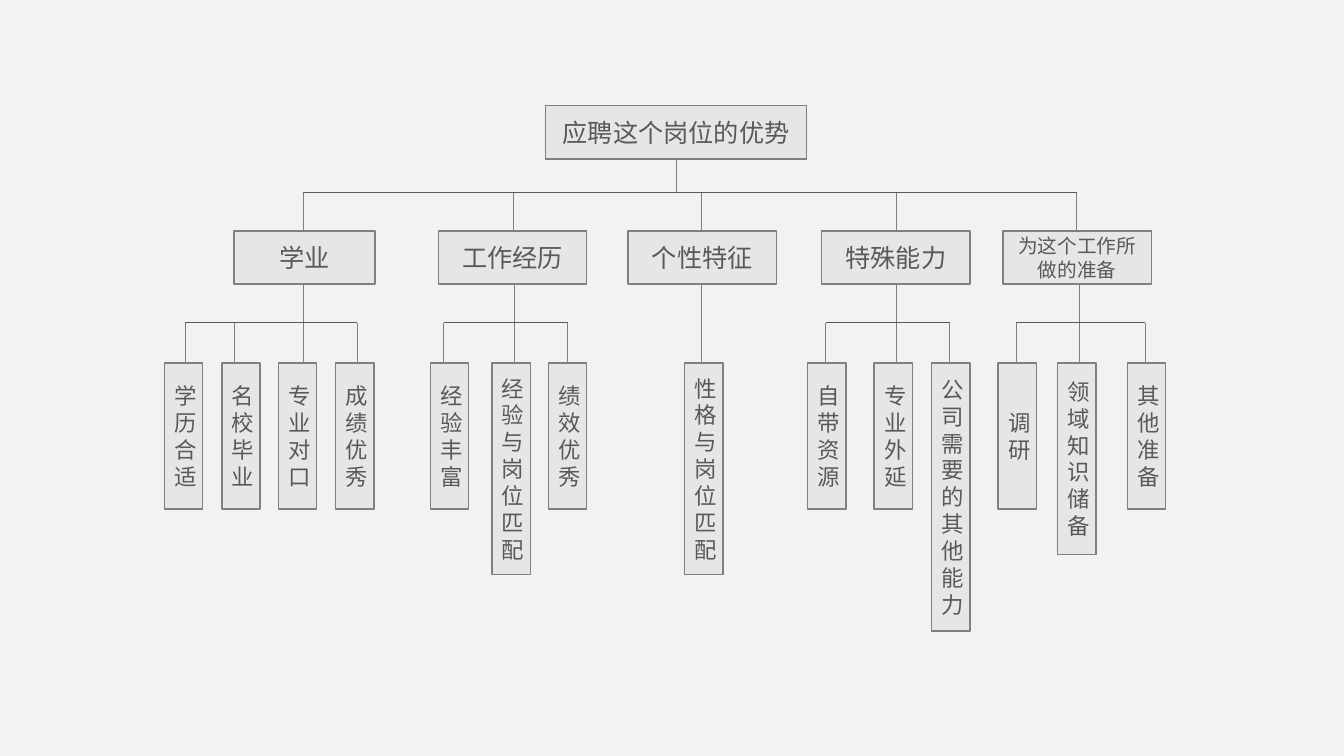
from pptx import Presentation
from pptx.dml.color import RGBColor
from pptx.enum.shapes import MSO_CONNECTOR, MSO_SHAPE
from pptx.enum.text import MSO_ANCHOR, PP_ALIGN
from pptx.oxml.ns import qn
from pptx.util import Inches, Pt
from lxml.etree import SubElement

COLORS = {"back": "F2F2F2", "box": "E7E6E6", "edge": "808080", "ink": "595959"}
FONT = "Noto Sans CJK SC"

ROOT_X, ROOT_END = 6.71, 1.58
BUS_Y, HEAD_Y, HEAD_H = 1.91, 2.29, 0.53
RAIL_Y, LEAF_Y, LEAF_W = 3.2, 3.6, 0.38

# heading, left, width, text size, drop x, stem x, leaves (text, left, height, tick x)
BRANCHES = [
    ("学业", 2.32, 1.4, 18, 3.01, 3.01, [
        ("学历合适", 1.63, 1.45, 1.84), ("名校毕业", 2.2, 1.45, 2.32),
        ("专业对口", 2.76, 1.45, 3.01), ("成绩优秀", 3.33, 1.45, 3.54)]),
    ("工作经历", 4.35, 1.47, 18, 5.09, 5.1, [
        ("经验丰富", 4.27, 1.45, 4.4), ("经验与岗位匹配", 4.88, 2.1, 5.1),
        ("绩效优秀", 5.44, 1.45, 5.63)]),
    ("个性特征", 6.23, 1.47, 18, 6.96, 6.96, [
        ("性格与岗位匹配", 6.79, 2.1, 6.96)]),
    ("特殊能力", 8.15, 1.47, 18, 8.89, 8.89, [
        ("自带资源", 8.01, 1.45, 8.19), ("专业外延", 8.67, 1.45, 8.89),
        ("公司需要的其他能力", 9.24, 2.66, 9.42)]),
    ("为这个工作所做的准备", 9.95, 1.47, 14, 10.68, 10.71, [
        ("调研", 9.9, 1.45, 10.08), ("领域知识储备", 10.49, 1.9, 10.71),
        ("其他准备", 11.18, 1.45, 11.36)]),
]

deck = Presentation()
deck.slide_width, deck.slide_height = Inches(13.33), Inches(7.5)
slide = deck.slides.add_slide(deck.slide_layouts[6])
slide.background.fill.solid()
slide.background.fill.fore_color.rgb = RGBColor.from_string(COLORS["back"])


def box(text, left, top, width, height, size):
    shape = slide.shapes.add_shape(
        MSO_SHAPE.RECTANGLE, *map(Inches, (left, top, width, height)))
    shape.shadow.inherit = False
    shape.fill.solid()
    shape.fill.fore_color.rgb = RGBColor.from_string(COLORS["box"])
    shape.line.color.rgb = RGBColor.from_string(COLORS["edge"])
    shape.line.width = Pt(1)
    frame = shape.text_frame
    para = frame.paragraphs[0]
    run = para.add_run()
    run.text = text
    formats = [
        (frame, {"word_wrap": True, "vertical_anchor": MSO_ANCHOR.MIDDLE}),
        (para, {"alignment": PP_ALIGN.CENTER, "line_spacing": Pt(1.2 * size)}),
        (run.font, {"name": FONT, "size": Pt(size)}),
    ]
    for target, values in formats:
        for key, value in values.items():
            setattr(target, key, value)
    run.font.color.rgb = RGBColor.from_string(COLORS["ink"])
    latin = run.font._element.find(qn("a:latin"))
    east = latin.makeelement(qn("a:ea"), {"typeface": FONT})
    latin.addnext(east)


def link(x1, y1, x2, y2, color="edge"):
    line = slide.shapes.add_connector(
        MSO_CONNECTOR.STRAIGHT, *map(Inches, (x1, y1, x2, y2)))
    line.line.color.rgb = RGBColor.from_string(COLORS[color])
    line.line.width = Pt(0.5)
    SubElement(line._element.spPr, qn("a:effectLst"))


box("应聘这个岗位的优势", 5.41, 1.05, 2.59, HEAD_H, 18)
link(ROOT_X, ROOT_END, ROOT_X, BUS_Y)
link(BRANCHES[0][4], BUS_Y, BRANCHES[-1][4], BUS_Y, "ink")

for name, left, width, size, drop, stem, leaves in BRANCHES:
    link(drop, BUS_Y, drop, HEAD_Y)
    box(name, left, HEAD_Y, width, HEAD_H, size)
    link(stem, HEAD_Y + HEAD_H, stem, RAIL_Y)
    if len(leaves) > 1:
        link(leaves[0][3], RAIL_Y, leaves[-1][3], RAIL_Y, "ink")
    for text, x, height, tick in leaves:
        link(tick, RAIL_Y, tick, LEAF_Y)
        box(text, x, LEAF_Y, LEAF_W, height, 16)

deck.save("out.pptx")
